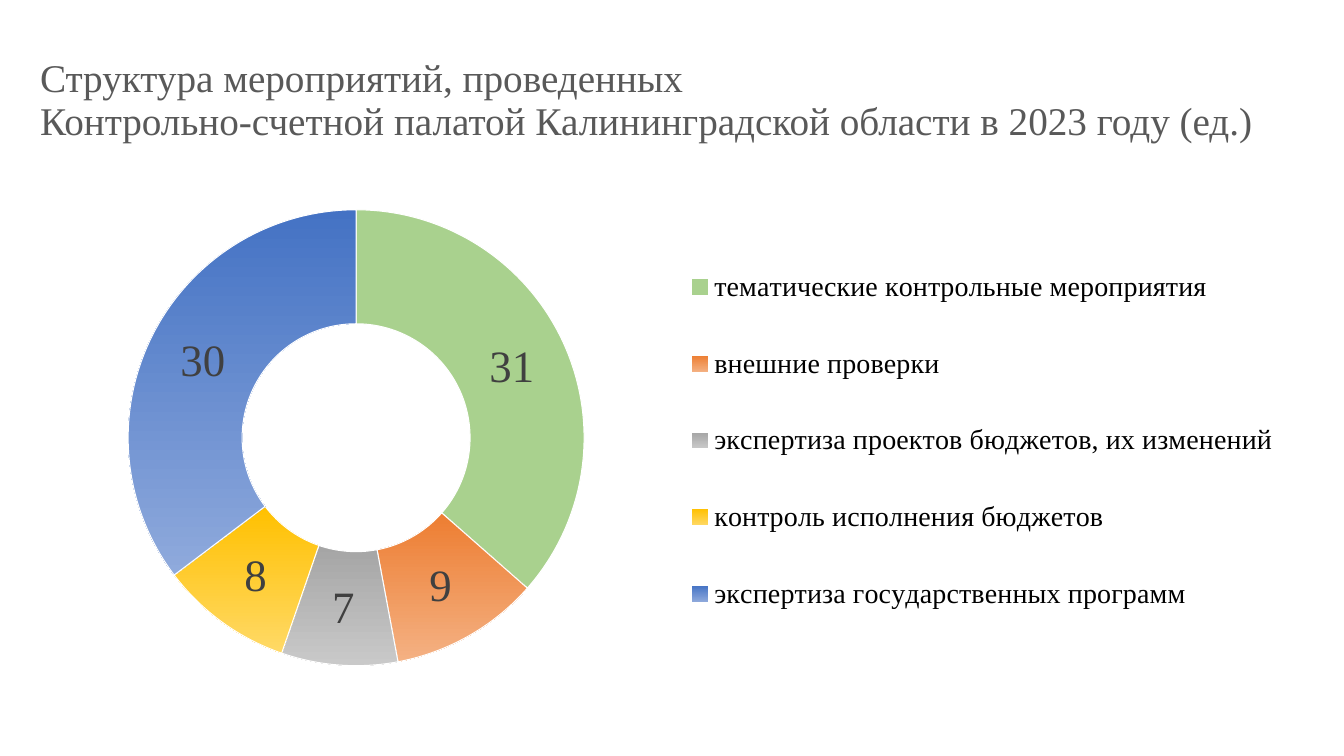
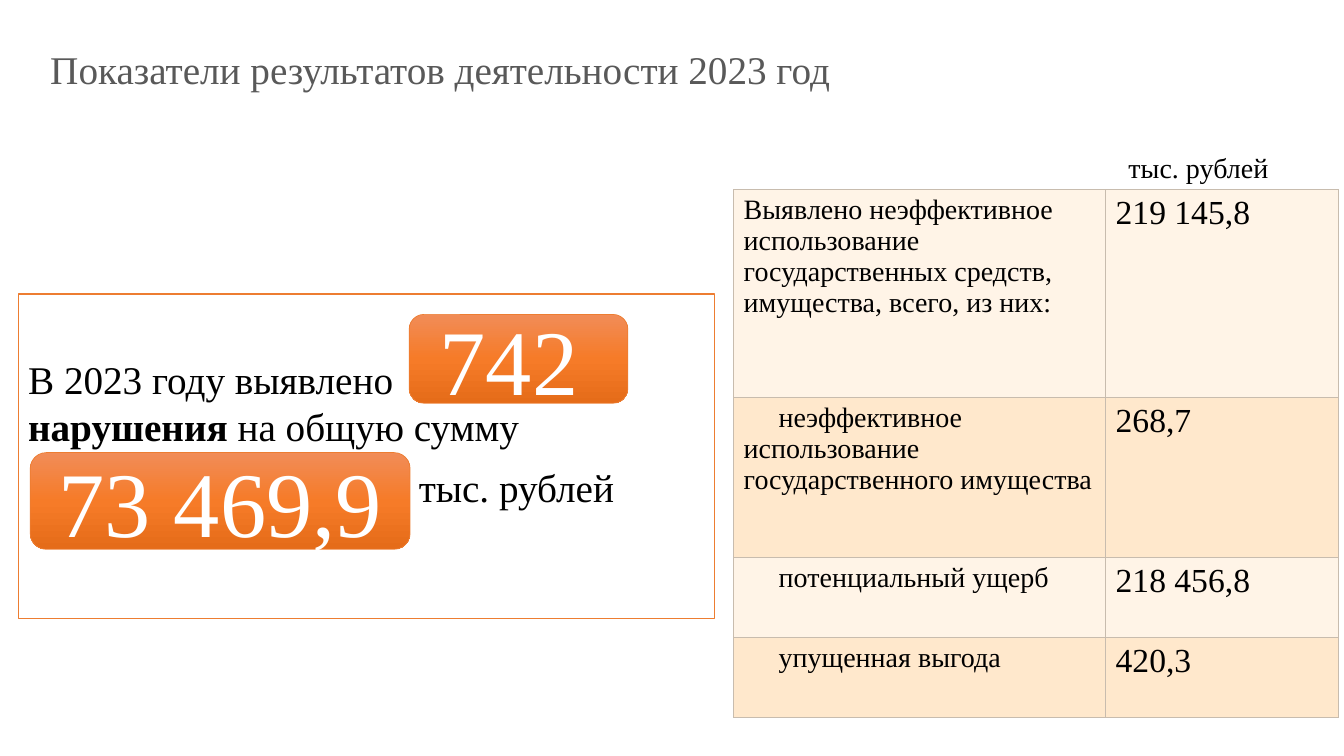
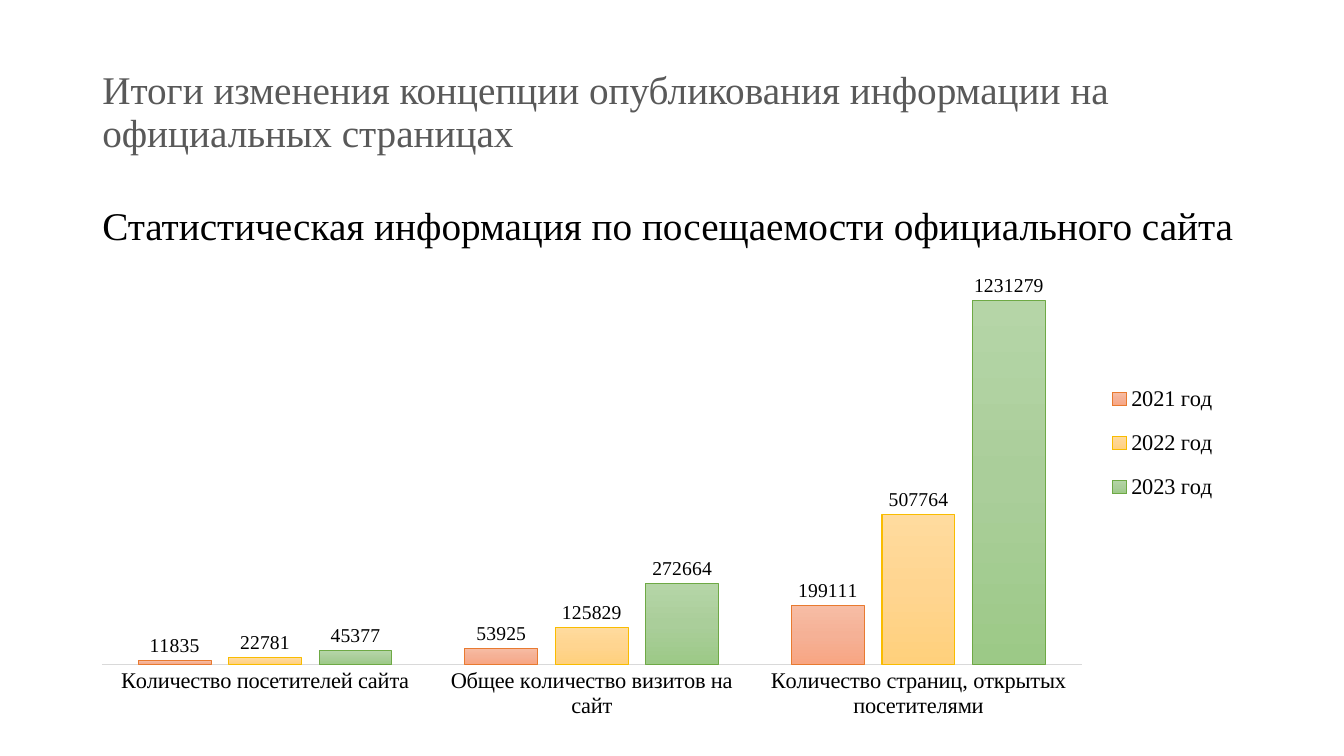
from lxml.etree import SubElement
from pptx import Presentation
from pptx.chart.data import CategoryChartData
from pptx.dml.color import RGBColor
from pptx.enum.chart import XL_CHART_TYPE, XL_LABEL_POSITION, XL_LEGEND_POSITION, XL_TICK_MARK
from pptx.enum.shapes import MSO_SHAPE
from pptx.enum.text import MSO_ANCHOR, PP_ALIGN
from pptx.oxml import parse_xml
from pptx.oxml.ns import nsdecls, qn
from pptx.util import Pt

COLORS = {
    "black": "000000", "white": "FFFFFF", "title": "595959", "label": "404040",
    "axis": "D9D9D9", "orange": "ED7D31", "border": "C8BCAE",
    "light_row": "FFF4E7", "dark_row": "FFE8CC",
}
BADGE_GRADIENT = ["F18C57", "F67B28", "E56C19"]
FONT = "Times New Roman"


def color(name):
    return RGBColor.from_string(COLORS.get(name, name))


def set_values(target, values):
    for name, value in values.items():
        setattr(target, name, value)


class Deck:
    def __init__(self):
        self.presentation = Presentation()
        set_values(self.presentation, {"slide_width": Pt(960), "slide_height": Pt(540)})
        self.slide = None

    def new_slide(self):
        self.slide = self.presentation.slides.add_slide(self.presentation.slide_layouts[6])

    def style_font(self, font, size, color_name="black", bold=False):
        set_values(font, {"name": FONT, "size": Pt(size), "bold": bold})
        font.color.rgb = color(color_name)

    def paint(self, fill, colors):
        if len(colors) == 1:
            fill.solid()
            fill.fore_color.rgb = color(colors[0])
            return
        fill.gradient()
        fill.gradient_angle = 270
        stops = fill._xPr.find(qn("a:gradFill")).find(qn("a:gsLst"))
        for stop in list(stops):
            stops.remove(stop)
        for index, name in enumerate(colors):
            position = 100000 * index // (len(colors) - 1)
            stop = SubElement(stops, qn("a:gs"), pos=str(position))
            SubElement(stop, qn("a:srgbClr"), val=COLORS.get(name, name))

    def outline(self, line, color_name, width):
        line.color.rgb = color(color_name)
        line.width = Pt(width)

    def fill_paragraph(self, paragraph, runs, size, color_name="black", left=0, indent=0,
                       **values):
        properties = paragraph._p.get_or_add_pPr()
        properties.set("marL", str(Pt(left)))
        properties.set("indent", str(Pt(indent)))
        set_values(paragraph, values)
        for text, bold in runs:
            for index, part in enumerate(text.split("\n")):
                if index:
                    paragraph.add_line_break()
                if part:
                    run = paragraph.add_run()
                    run.text = part
                    self.style_font(run.font, size, color_name, bold)

    def text(self, box, content, size=28, color_name="black", anchor=MSO_ANCHOR.TOP, **values):
        frame = self.slide.shapes.add_textbox(*map(Pt, box)).text_frame
        set_values(frame, {"word_wrap": True, "vertical_anchor": anchor})
        self.fill_paragraph(frame.paragraphs[0], [(content, False)], size, color_name, **values)

    def title(self, box, content):
        self.text(box, content, 28, "title", MSO_ANCHOR.MIDDLE, line_spacing=0.9)

    def shape(self, kind, box, colors, line_width, **frame_values):
        shape = self.slide.shapes.add_shape(kind, *map(Pt, box))
        shape.shadow.inherit = False
        self.paint(shape.fill, colors)
        self.outline(shape.line, "orange", line_width)
        set_values(shape.text_frame, {"word_wrap": True, **frame_values})
        return shape.text_frame

    def badge(self, box, content, right=7.2):
        frame = self.shape(MSO_SHAPE.ROUNDED_RECTANGLE, box, BADGE_GRADIENT, 0.5,
                           vertical_anchor=MSO_ANCHOR.MIDDLE, margin_right=Pt(right))
        self.fill_paragraph(frame.paragraphs[0], [(content, False)], 66, "white",
                            alignment=PP_ALIGN.CENTER)

    def table(self, box, widths, heights, rows):
        table = self.slide.shapes.add_table(len(rows), len(widths), *map(Pt, box)).table
        set_values(table, {"first_row": False, "horz_banding": False})
        for column, width in zip(table.columns, widths):
            column.width = Pt(width)
        for index, (height, (indent, *texts)) in enumerate(zip(heights, rows)):
            table.rows[index].height = Pt(height)
            fill = "dark_row" if index % 2 else "light_row"
            for cell, content, size, first in zip(table.rows[index].cells, texts,
                                                  (20, 24), (indent, 0)):
                self.fill_paragraph(cell.text_frame.paragraphs[0], [(content, False)], size,
                                    indent=first)
                properties = cell._tc.get_or_add_tcPr()
                for side in ("lnL", "lnR", "lnT", "lnB"):
                    properties.append(parse_xml(
                        f'<a:{side} {nsdecls("a")} w="{Pt(0.75)}"><a:solidFill>'
                        f'<a:srgbClr val="{COLORS["border"]}"/></a:solidFill></a:{side}>'))
                self.paint(cell.fill, [fill])

    def layout(self, parent, area, inner=False):
        for old in parent.findall(qn("c:layout")):
            parent.remove(old)
        target = '<c:layoutTarget val="inner"/>' if inner else ""
        modes = "".join(f'<c:{name}Mode val="edge"/>' for name in "xy")
        sizes = "".join(f'<c:{name} val="{value}"/>' for name, value in zip("xywh", area))
        layout = parse_xml(f'<c:layout {nsdecls("c")}><c:manualLayout>{target}{modes}{sizes}'
                           f'</c:manualLayout></c:layout>')
        if inner:
            parent.insert(0, layout)
        else:
            parent.find(qn("c:legendPos")).addnext(layout)

    def chart(self, kind, box, categories, series, plot_area, legend_area, legend_size):
        data = CategoryChartData()
        data.categories = categories
        for name, values in series:
            data.add_series(name, values)
        chart = self.slide.shapes.add_chart(kind, *map(Pt, box), data).chart
        set_values(chart, {"has_title": False, "has_legend": True})
        self.style_font(chart.font, 10)
        set_values(chart.legend, {"position": XL_LEGEND_POSITION.RIGHT,
                                  "include_in_layout": False})
        self.style_font(chart.legend.font, legend_size)
        self.layout(chart.legend._element, legend_area)
        self.layout(chart._chartSpace.chart.plotArea, plot_area, inner=True)
        return chart

    def labels(self, plot, size, color_name="black", **values):
        plot.has_data_labels = True
        set_values(plot.data_labels, {"show_value": True, "show_percentage": False,
                                      "number_format": "0",
                                      "number_format_is_linked": False, **values})
        self.style_font(plot.data_labels.font, size, color_name)

    def doughnut(self, box, slices, plot_area, legend_area):
        names, values, fills = zip(*slices)
        chart = self.chart(XL_CHART_TYPE.DOUGHNUT, box, names, [("Мероприятия", values)],
                           plot_area, legend_area, 20)
        plot = chart.plots[0]
        plot.vary_by_categories = True
        for index, colors in enumerate(fills):
            point_format = plot.series[0].points[index].format
            self.paint(point_format.fill, colors)
            self.outline(point_format.line, "white", 0.75)
        self.labels(plot, 32, "label")

    def columns(self, box, categories, series, plot_area, legend_area):
        chart = self.chart(XL_CHART_TYPE.COLUMN_CLUSTERED, box, categories,
                           [item[:2] for item in series], plot_area, legend_area, 16)
        plot = chart.plots[0]
        set_values(plot, {"vary_by_categories": False, "gap_width": 100, "overlap": -24})
        for plotted, (_, _, colors, line) in zip(plot.series, series):
            self.paint(plotted.format.fill, colors)
            self.outline(plotted.format.line, line, 0.75)
        self.labels(plot, 14, position=XL_LABEL_POSITION.OUTSIDE_END)
        set_values(chart.value_axis, {"visible": False, "has_major_gridlines": False,
                                      "minimum_scale": 0, "maximum_scale": 1400000})
        axis = chart.category_axis
        axis.major_tick_mark = XL_TICK_MARK.NONE
        self.style_font(axis.tick_labels.font, 16)
        self.outline(axis.format.line, "axis", 0.75)


def structure_slide(deck):
    deck.new_slide()
    deck.doughnut((33, 122.4, 903.6, 392.4), [
        ("тематические контрольные мероприятия", 31, ["A9D18E"]),
        ("внешние проверки", 9, ["ED7D31", "F4B183"]),
        ("экспертиза проектов бюджетов, их изменений", 7, ["A5A5A5", "C9C9C9"]),
        ("контроль исполнения бюджетов", 8, ["FFC000", "FFD966"]),
        ("экспертиза государственных программ", 30, ["4472C4", "8FAADC"]),
    ], (0.04, 0.07, 0.41, 0.83), (0.5, 0.1, 0.48, 0.78))
    deck.title((21.6, 28.8, 914.4, 87), "Структура мероприятий, проведенных\n"
               "Контрольно-счетной палатой Калининградской области в 2023 году (ед.)")


def results_slide(deck):
    deck.new_slide()
    frame = deck.shape(MSO_SHAPE.RECTANGLE, (13, 210, 497.5, 232), ["white"], 1,
                       vertical_anchor=MSO_ANCHOR.TOP, margin_top=Pt(44))
    spacing = {"line_spacing": Pt(33.5), "alignment": PP_ALIGN.LEFT}
    deck.fill_paragraph(frame.paragraphs[0], [
        ("В 2023 году выявлено\n", False), ("нарушения", True), (" на общую сумму", False),
    ], 28, **spacing)
    deck.fill_paragraph(frame.add_paragraph(), [("тыс. рублей", False)], 28, left=279,
                        space_before=Pt(10), **spacing)
    deck.badge((292.3, 224.6, 156.2, 63.4), "742", 20.7)
    deck.badge((21.6, 323.3, 271.4, 69.1), "73 469,9")
    deck.title((28.8, 3.6, 718.6, 95.8), "Показатели результатов деятельности 2023 год")
    deck.table((524, 135.4, 432, 377), (265.7, 166.3), (148.4, 114.4, 57, 57), [
        (0, "Выявлено неэффективное использование государственных средств, "
            "имущества, всего, из них:", "219 145,8"),
        (25, "неэффективное использование государственного имущества", "268,7"),
        (25, "потенциальный ущерб", "218 456,8"),
        (25, "упущенная выгода", "420,3"),
    ])
    deck.text((756.7, 103.7, 198.7, 31.7), "тыс. рублей", 20, alignment=PP_ALIGN.CENTER)


def visits_slide(deck):
    deck.new_slide()
    deck.title((66, 28.8, 828, 104.4),
               "Итоги изменения концепции опубликования информации на официальных страницах")
    deck.text((66, 144, 828, 342.7),
              "Статистическая информация по посещаемости официального сайта", line_spacing=0.9)
    deck.columns((56.2, 172.1, 823.7, 347.8), [
        "Количество посетителей сайта", "Общее количество визитов на сайт",
        "Количество страниц, открытых посетителями",
    ], [
        ("2021 год", (11835, 53925, 199111), ["F7BDA5", "F5B196", "F8A582"], "E87A30"),
        ("2022 год", (22781, 125829, 507764), ["FFDB9E", "FFD590", "FFD07C"], "F9BC00"),
        ("2023 год", (45377, 272664, 1231279), ["B5D5A7", "AACE9A", "9CC987"], "6EA945"),
    ], (0.02, 0.02, 0.85, 0.85), (0.89, 0.26, 0.1, 0.31))


def main():
    deck = Deck()
    structure_slide(deck)
    results_slide(deck)
    visits_slide(deck)
    deck.presentation.save("out.pptx")


if __name__ == "__main__":
    main()
